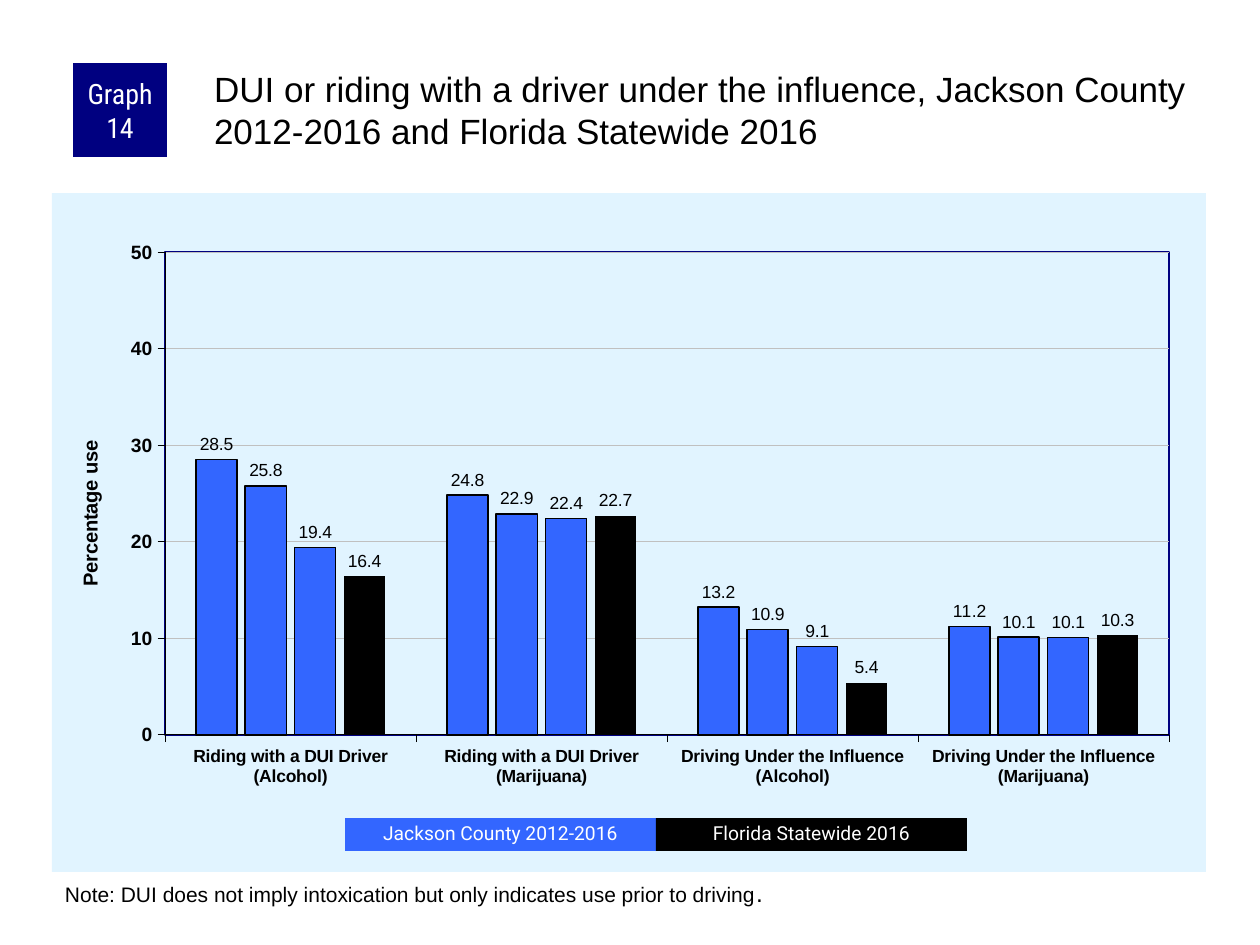
from pptx import Presentation
from pptx import util as u
from pptx.chart.data import CategoryChartData
from pptx.dml.color import RGBColor
from pptx.enum import chart as charts, shapes, text
from pptx.oxml import parse_xml
from pptx.oxml.ns import nsdecls

SCALE = 914400 / 126
BLACK = RGBColor(0, 0, 0)
WHITE = RGBColor(255, 255, 255)
NAVY = RGBColor(0, 0, 128)
BLUE = RGBColor(0x33, 0x66, 0xFF)
PALE = RGBColor(0xE1, 0xF4, 0xFF)
SILVER = RGBColor(0xC0, 0xC0, 0xC0)

CATEGORIES = ["Riding with a DUI Driver (Alcohol)", "Riding with a DUI Driver (Marijuana)",
              "Driving Under the Influence (Alcohol)", "Driving Under the Influence (Marijuana)"]
SERIES = [("Series 1", (28.5, 24.8, 13.2, 11.2), BLUE, 1),
          ("Series 2", (25.8, 22.9, 10.9, 10.1), BLUE, 1),
          ("Series 3", (19.4, 22.4, 9.1, 10.1), BLUE, 0.75),
          ("Series 4", (16.4, 22.7, 5.4, 10.3), BLACK, 0)]
PLOT = {"x": 0.098, "y": 0.087, "w": 0.87, "h": 0.711}


def px(*lengths):
    """Turn px lengths into EMU."""
    return [u.Emu(round(length * SCALE)) for length in lengths]


def apply(target, **values):
    """Set attributes from a dict of format values."""
    for name, value in values.items():
        setattr(target, name, value)


def style_font(font, size, color=BLACK, name="Arial", bold=False):
    """Format a font."""
    apply(font, size=u.Pt(size), name=name, bold=bold)
    font.color.rgb = color


def style_line(line, color, width):
    """Format a line, or hide it when it has no width."""
    if width:
        line.color.rgb = color
        line.width = u.Pt(width)
    else:
        line.fill.background()


def write(shape, spans, insets, name="Arial", color=BLACK, align=text.PP_ALIGN.LEFT,
          anchor=text.MSO_ANCHOR.TOP, spacing=1.0):
    """Fill a shape with one paragraph of (wording, size) spans."""
    frame = shape.text_frame
    left, top, right, bottom = px(*insets)
    apply(frame, word_wrap=True, auto_size=text.MSO_AUTO_SIZE.NONE, vertical_anchor=anchor,
          margin_left=left, margin_top=top, margin_right=right, margin_bottom=bottom)
    para = frame.paragraphs[0]
    apply(para, alignment=align, line_spacing=spacing)
    for wording, size in spans:
        span = para.add_run()
        span.text = wording
        style_font(span.font, size, color, name)


def add_block(page, box, fill, wording, size, name, insets, spacing=1.0):
    """Add a filled rectangle with centred white text."""
    block = page.shapes.add_shape(shapes.MSO_SHAPE.RECTANGLE, *px(*box))
    block.shadow.inherit = False
    block.fill.solid()
    block.fill.fore_color.rgb = fill
    block.line.fill.background()
    write(block, [(wording, size)], insets, name, WHITE, text.PP_ALIGN.CENTER,
          text.MSO_ANCHOR.MIDDLE, spacing)


def add_header(page, box):
    """Place the graph number and the title."""
    left, top, width, height = box
    title = page.shapes.title
    x, y, w, h = px(left + 137, top, width - 137, height)
    apply(title, left=x, top=y, width=w, height=h)
    write(title, [("DUI or riding with a driver under the influence, Jackson County "
                   "2012-2016 and Florida Statewide 2016", 20)], (4, 4, 0, 0))
    add_block(page, (left, top, 94, 94), NAVY, "Graph 14", 16, "Roboto Condensed", (6, 0, 6, 0))


def style_axes(chart):
    """Format both axes, the gridlines and the axis title."""
    for axis, size in ((chart.category_axis, 10), (chart.value_axis, 11)):
        apply(axis, major_tick_mark=charts.XL_TICK_MARK.OUTSIDE,
              minor_tick_mark=charts.XL_TICK_MARK.NONE)
        style_font(axis.tick_labels.font, size, bold=True)
        style_line(axis.format.line, BLACK, 0.25)
    axis = chart.value_axis
    apply(axis, minimum_scale=0, maximum_scale=50, major_unit=10, has_major_gridlines=True)
    apply(axis.tick_labels, number_format="0", number_format_is_linked=False)
    style_line(axis.major_gridlines.format.line, SILVER, 0.25)
    frame = axis.axis_title.text_frame
    frame.text = "Percentage use"
    style_font(frame.paragraphs[0].runs[0].font, 11.5, bold=True)


def style_areas(chart):
    """Fill the chart, frame the plot and fix its inner place."""
    root = chart.element
    root.xpath("c:chart")[0].addnext(parse_xml(
        f'<c:spPr {nsdecls("c", "a")}><a:solidFill><a:srgbClr val="{PALE}"/></a:solidFill>'
        '<a:ln><a:noFill/></a:ln></c:spPr>'))
    plot = root.xpath("c:chart/c:plotArea")[0]
    for layout in plot.xpath("c:layout"):
        plot.remove(layout)
    modes = "".join(f'<c:{side}Mode val="edge"/>' for side in "xy")
    sizes = "".join(f'<c:{side} val="{share}"/>' for side, share in PLOT.items())
    plot.insert(0, parse_xml(
        f'<c:layout {nsdecls("c")}><c:manualLayout><c:layoutTarget val="inner"/>'
        f'{modes}{sizes}</c:manualLayout></c:layout>'))
    plot.append(parse_xml(
        f'<c:spPr {nsdecls("c", "a")}><a:noFill/><a:ln w="12700"><a:solidFill>'
        f'<a:srgbClr val="{NAVY}"/></a:solidFill></a:ln></c:spPr>'))


def add_graph(page, box):
    """Place the column chart."""
    chart_data = CategoryChartData(number_format="0.0")
    chart_data.categories = CATEGORIES
    for name, values, *_ in SERIES:
        chart_data.add_series(name, values)
    chart = page.shapes.add_chart(charts.XL_CHART_TYPE.COLUMN_CLUSTERED,
                                  *px(*box), chart_data).chart
    apply(chart, has_title=False, has_legend=False)
    style_font(chart.font, 11.5)
    plot = chart.plots[0]
    apply(plot, gap_width=150, overlap=-20, vary_by_categories=False)
    for series, (_, _, color, width) in zip(plot.series, SERIES):
        series.format.fill.solid()
        series.format.fill.fore_color.rgb = color
        style_line(series.format.line, BLACK, width)
        labels = series.data_labels
        apply(labels, show_value=True, number_format="0.0", number_format_is_linked=False,
              position=charts.XL_LABEL_POSITION.OUTSIDE_END)
        style_font(labels.font, 10)
    style_axes(chart)
    style_areas(chart)


def add_legend(page, box):
    """Place the two legend blocks side by side."""
    left, top, width, height = box
    half = width // 2
    entries = (("Jackson County 2012-2016", BLUE), ("Florida Statewide 2016", BLACK))
    for index, (wording, fill) in enumerate(entries):
        add_block(page, (left + index * half, top, half, height), fill, wording, 11,
                  "Roboto", (13, 6, 13, 6), 0.9)


def add_note(page, box):
    """Place the note below the chart."""
    note = page.shapes.add_textbox(*px(*box))
    write(note, [("Note: DUI does not imply intoxication but only indicates use prior to driving", 12),
                 (".", 14)], (13, 6, 13, 6))


def main():
    """Build the slide and save the deck."""
    deck = Presentation()
    deck.slide_width, deck.slide_height = px(1260, 945)
    page = deck.slides.add_slide(deck.slide_layouts[5])
    add_graph(page, (52, 193, 1154, 679))
    add_header(page, (73, 63, 1135, 105))
    add_note(page, (52, 872, 1155, 43))
    add_legend(page, (345, 818, 622, 33))
    deck.save("out.pptx")


if __name__ == "__main__":
    main()
